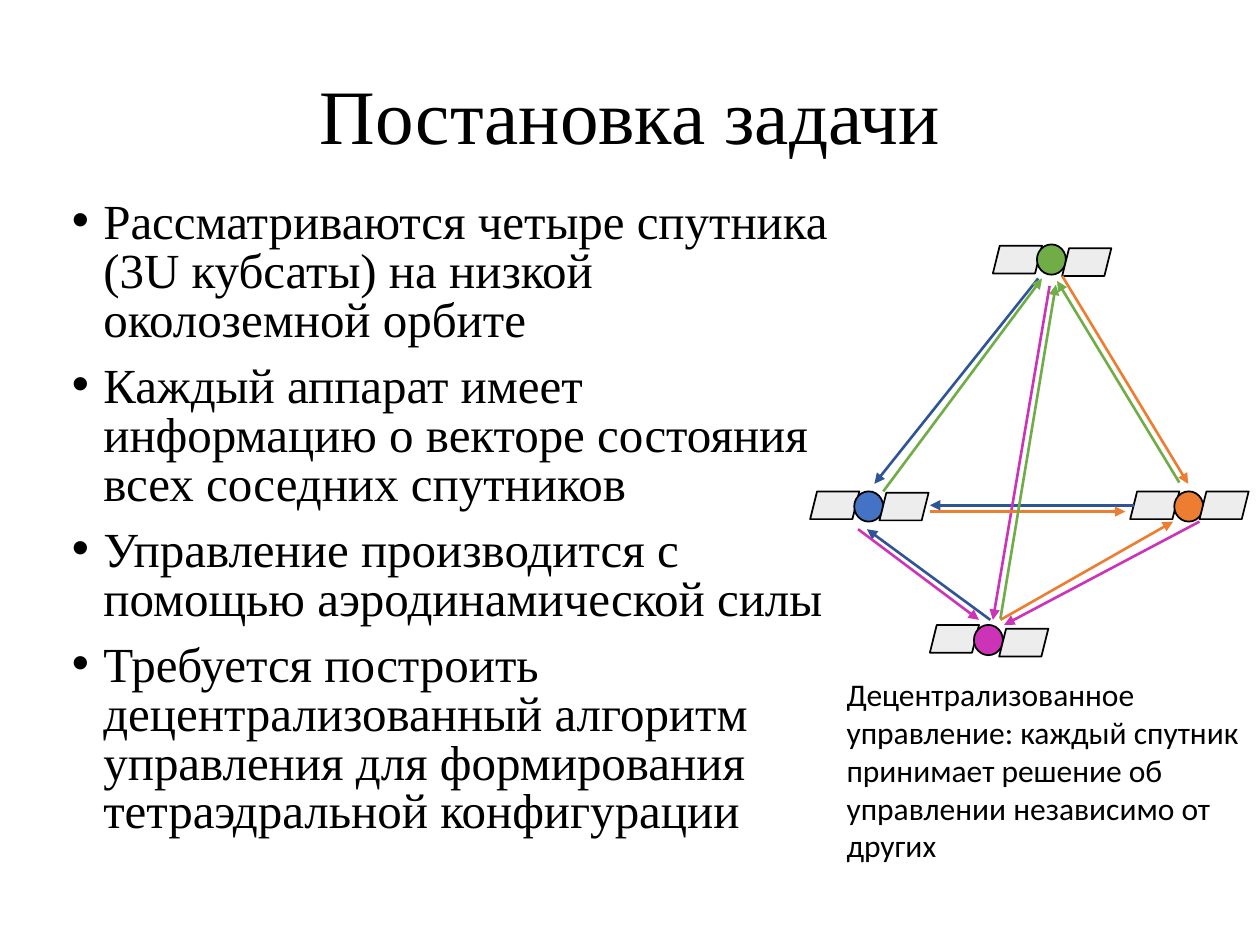
from lxml import etree
from pptx import Presentation
from pptx import util as u
from pptx.dml.color import RGBColor
from pptx.enum import shapes, text
from pptx.oxml import ns

BLACK, PANEL = "000000", "EDEDED"
GREEN, BLUE, ORANGE, MAGENTA = "70AD47", "4472C4", "ED7D31", "CD33B7"
DARK_BLUE = "2F5597"


def color(value):
    return RGBColor.from_string(value)


class SlideBuilder:
    heading_font = "Times New Roman"
    caption_font = "Calibri"

    def __init__(self, slide):
        self.slide = slide

    def place(self, shape, left, top, width, height):
        shape.left, shape.top = u.Inches(left), u.Inches(top)
        shape.width, shape.height = u.Inches(width), u.Inches(height)

    def format_runs(self, paragraph, font, size):
        for run in paragraph.runs:
            run.font.name = font
            run.font.size = u.Pt(size)
            run.font.color.rgb = color(BLACK)

    def title(self, wording, *box):
        shape = self.slide.shapes.title
        self.place(shape, *box)
        frame = shape.text_frame
        frame.text = wording
        frame.auto_size = text.MSO_AUTO_SIZE.NONE
        frame.vertical_anchor = text.MSO_ANCHOR.MIDDLE
        paragraph = frame.paragraphs[0]
        paragraph.alignment = text.PP_ALIGN.CENTER
        paragraph.line_spacing = 0.9
        self.format_runs(paragraph, self.heading_font, 44)

    def bullets(self, items, *box):
        shape = self.slide.placeholders[1]
        self.place(shape, *box)
        frame = shape.text_frame
        frame.text = "\n".join(items)
        frame.auto_size = text.MSO_AUTO_SIZE.NONE
        for paragraph in frame.paragraphs:
            paragraph.line_spacing = 0.83
            paragraph.space_before = u.Pt(10)
            properties = paragraph._p.get_or_add_pPr()
            properties.set("marL", str(u.Inches(0.25)))
            properties.set("indent", str(-u.Inches(0.25)))
            etree.SubElement(properties, ns.qn("a:buChar"), char="•")
            self.format_runs(paragraph, self.heading_font, 28)

    def caption(self, wording, *box):
        shape = self.slide.shapes.add_textbox(*map(u.Inches, box))
        frame = shape.text_frame
        frame.word_wrap = True
        frame.text = wording
        self.format_runs(frame.paragraphs[0], self.caption_font, 18)

    def outlined_shape(self, group, kind, fill, *box):
        shape = group.shapes.add_shape(kind, *map(u.Inches, box))
        shape.shadow.inherit = False
        shape.fill.solid()
        shape.fill.fore_color.rgb = color(fill)
        shape.line.color.rgb = color(BLACK)
        shape.line.width = u.Pt(1)

    def satellite(self, left, top, fill, left_drop, right_drop):
        group = self.slide.shapes.add_group_shape()
        panel = shapes.MSO_SHAPE.PARALLELOGRAM
        body = shapes.MSO_SHAPE.OVAL
        self.outlined_shape(group, panel, PANEL, left, top + left_drop, 0.39, 0.22)
        self.outlined_shape(group, body, fill, left + 0.35, top, 0.23, 0.24)
        self.outlined_shape(group, panel, PANEL, left + 0.55, top + right_drop, 0.39, 0.22)

    def arrow(self, line_color, start, end):
        connector = self.slide.shapes.add_connector(
            shapes.MSO_CONNECTOR.STRAIGHT, *map(u.Inches, start + end))
        connector.line.color.rgb = color(line_color)
        connector.line.width = u.Pt(1.5)
        line = connector.line._get_or_add_ln()
        etree.SubElement(line, ns.qn("a:tailEnd"), type="triangle")
        etree.SubElement(connector._element.spPr, ns.qn("a:effectLst"))


def main():
    presentation = Presentation()
    presentation.slide_width = u.Inches(10)
    presentation.slide_height = u.Inches(7.5)
    slide = presentation.slides.add_slide(presentation.slide_layouts[1])
    builder = SlideBuilder(slide)

    builder.title("Постановка задачи", 0.69, 0.22, 8.62, 1.45)
    builder.bullets([
        "Рассматриваются четыре спутника (3U кубсаты) на низкой околоземной орбите",
        "Каждый аппарат имеет информацию о векторе состояния всех соседних спутников",
        "Управление производится с помощью аэродинамической силы",
        "Требуется построить децентрализованный алгоритм управления "
        "для формирования тетраэдральной конфигурации",
    ], 0.47, 1.54, 6.2, 5.25)

    satellites = [
        (7.88, 1.94, GREEN, 0.01, 0.03),
        (6.43, 3.9, BLUE, 0, 0.01),
        (8.97, 3.9, ORANGE, 0, 0),
        (7.38, 4.96, MAGENTA, 0, 0.03),
    ]
    for satellite in satellites:
        builder.satellite(*satellite)

    links = {
        DARK_BLUE: [((8.24, 2.21), (6.94, 3.84)),
                    ((7.86, 4.92), (6.88, 4.2)),
                    ((9, 4.01), (7.38, 4.01))],
        MAGENTA: [((8.33, 2.27), (7.88, 4.92)),
                  ((6.81, 4.2), (7.77, 4.92)),
                  ((9.52, 4.14), (7.97, 4.96))],
        ORANGE: [((8.43, 2.19), (9.43, 3.84)),
                 ((7.94, 4.92), (9.31, 4.14)),
                 ((7.38, 4.06), (8.93, 4.06))],
        GREEN: [((7.01, 3.9), (8.27, 2.21)),
                ((7.94, 4.91), (8.38, 2.26)),
                ((9.36, 3.83), (8.39, 2.23))],
    }
    for line_color, routes in links.items():
        for start, end in routes:
            builder.arrow(line_color, start, end)

    builder.caption(
        "Децентрализованное управление: каждый спутник принимает решение "
        "об управлении независимо от других", 6.62, 5.31, 3.38, 1.62)
    presentation.save("out.pptx")


if __name__ == "__main__":
    main()
